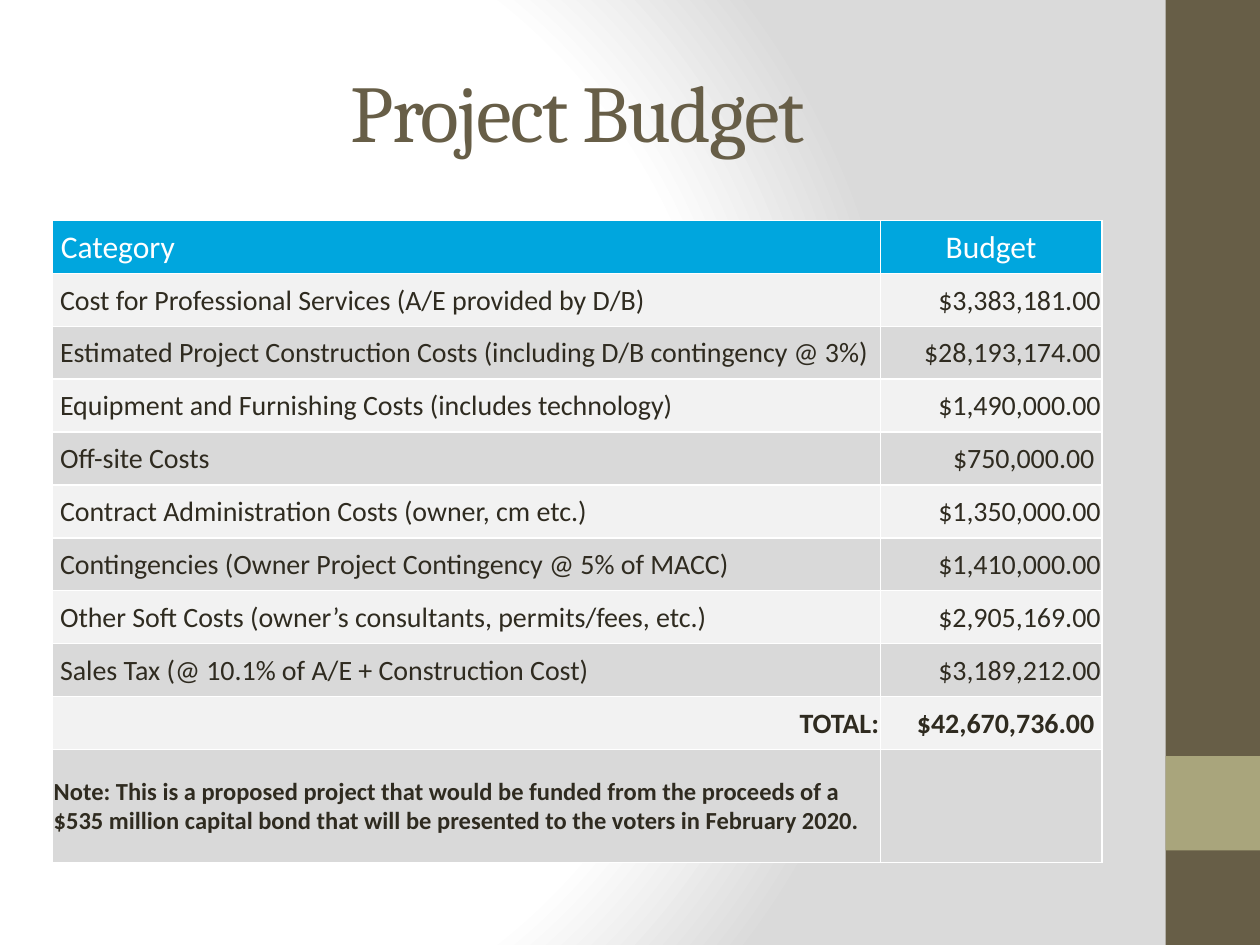
from pptx import Presentation, util as u
from pptx.dml.color import RGBColor
from pptx.enum import shapes, text
from pptx.oxml import parse_xml
from pptx.oxml.ns import nsdecls, qn

WIDE, HIGH = 10, 7.5
LEFT, SPAN = WIDE / 24, WIDE * 5 / 6
ROW, NOTE = 0.42, 0.9
DARK, SAGE, INK, BLUE, WHITE = "675E47", "A9A57C", "2F2B20", "00A6DE", "FFFFFF"
BANDS = "D9D9D9", "F2F2F2"
STOPS = (0, WHITE), (75, WHITE), (100, "DADADA")
MID = text.MSO_ANCHOR.MIDDLE
START, CENTER, END = text.PP_ALIGN.LEFT, text.PP_ALIGN.CENTER, text.PP_ALIGN.RIGHT

COSTS = [
    (" Cost for Professional Services (A/E provided by D/B)", "$3,383,181.00"),
    (" Estimated Project Construction Costs (including D/B contingency @ 3%)",
     "$28,193,174.00"),
    (" Equipment and Furnishing Costs (includes technology)", "$1,490,000.00"),
    (" Off-site Costs", "$750,000.00 "),
    (" Contract Administration Costs (owner, cm etc.)", "$1,350,000.00"),
    (" Contingencies (Owner Project Contingency @ 5% of MACC)", "$1,410,000.00"),
    (" Other Soft Costs (owner’s consultants, permits/fees, etc.)", "$2,905,169.00"),
    (" Sales Tax (@ 10.1% of A/E + Construction Cost)", "$3,189,212.00"),
]
REMARK = ("Note: This is a proposed project that would be funded from the proceeds "
          "of a $535 million capital bond that will be presented to the voters in "
          "February 2020.")


def tint(code):
    return RGBColor.from_string(code)


def inches(*sizes):
    return [u.Inches(size) for size in sizes]


def write(frame, words, align, color, **form):
    """Put one run in the frame; form holds the font's values."""
    para = frame.paragraphs[0]
    para.alignment = align
    run = para.add_run()
    run.text = words
    run.font.color.rgb = tint(color)
    for key, value in form.items():
        setattr(run.font, key, value)
    return run


def glow(slide):
    """Fill the background with a radial gradient."""
    slide.background.fill.solid()
    stops = "".join(f'<a:gs pos="{pos * 1000}"><a:srgbClr val="{code}"/></a:gs>'
                    for pos, code in STOPS)
    slide.element.find(".//" + qn("p:bgPr"))[0] = parse_xml(
        f'<a:gradFill {nsdecls("a")} rotWithShape="1"><a:gsLst>{stops}</a:gsLst>'
        '<a:path path="circle"><a:fillToRect l="20000" t="50000" r="100000" '
        'b="50000"/></a:path></a:gradFill>')


def block(slide, color, *area):
    rect = slide.shapes.add_shape(shapes.MSO_SHAPE.RECTANGLE, *inches(*area))
    rect.shadow.inherit = False
    rect.fill.solid()
    rect.fill.fore_color.rgb = tint(color)
    rect.line.fill.background()


def title(slide, words):
    area = inches(LEFT, HIGH / 30, SPAN, HIGH / 6)
    frame = slide.shapes.add_textbox(*area).text_frame
    frame.word_wrap = True
    frame.vertical_anchor = MID
    run = write(frame, words, CENTER, DARK, name="Cambria", size=u.Pt(46))
    run.font._element.set("spc", "-100")


def border(cell):
    props = cell._tc.get_or_add_tcPr()
    for spot, side in enumerate("LRTB"):
        props.insert(spot, parse_xml(
            f'<a:ln{side} {nsdecls("a")} w="12700"><a:solidFill>'
            f'<a:srgbClr val="{WHITE}"/></a:solidFill></a:ln{side}>'))


def dress(cell, color):
    """Give a cell its fill, anchor, margins and borders."""
    cell.fill.solid()
    cell.fill.fore_color.rgb = tint(color)
    pad = u.Inches(0.01)
    form = dict(vertical_anchor=MID, margin_left=pad, margin_right=pad,
                margin_top=pad, margin_bottom=0)
    for key, value in form.items():
        setattr(cell, key, value)
    border(cell)


def budget(slide):
    total = len(COSTS) + 1
    rows = [(" Category", "Budget"), *COSTS,
            ("TOTAL:", "$42,670,736.00 "), (REMARK, "")]
    highs = [ROW] * (total + 1) + [NOTE]
    area = inches(LEFT, 1.75, SPAN, sum(highs))
    grid = slide.shapes.add_table(len(rows), 2, *area).table
    for col, wide in zip(grid.columns, (6.57, 1.76)):
        col.width = u.Inches(wide)
    for i, (row, high) in enumerate(zip(rows, highs)):
        grid.rows[i].height = u.Inches(high)
        head = i == 0
        size = 18 if head else 14 if i > total else 16
        sides = ((START, CENTER) if head else
                 (END if i == total else START, END))
        for j, words in enumerate(row):
            cell = grid.cell(i, j)
            dress(cell, BLUE if head else BANDS[i % 2])
            if words:
                write(cell.text_frame, words, sides[j], WHITE if head else INK,
                      name="Calibri", size=u.Pt(size), bold=i >= total)


def main():
    deck = Presentation()
    deck.slide_width, deck.slide_height = inches(WIDE, HIGH)
    slide = deck.slides.add_slide(deck.slide_layouts[6])
    glow(slide)
    bar = 0.75
    block(slide, DARK, WIDE - bar, 0, bar, HIGH)
    block(slide, SAGE, WIDE - bar, HIGH * 0.8, bar, bar)
    title(slide, "Project Budget")
    budget(slide)
    deck.save("out.pptx")


if __name__ == "__main__":
    main()
